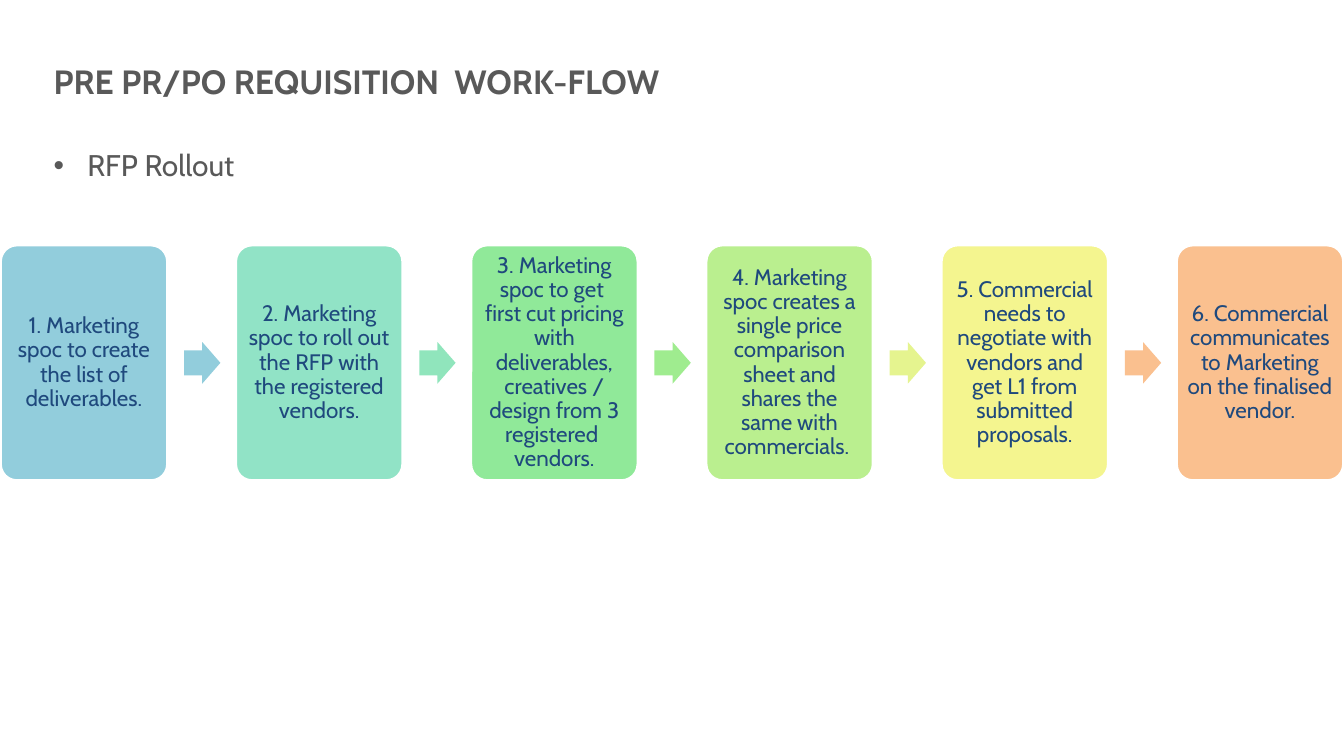
from dataclasses import dataclass

from lxml import etree
from pptx import Presentation
from pptx.dml.color import RGBColor
from pptx.enum.shapes import MSO_SHAPE
from pptx.enum.text import MSO_ANCHOR, PP_ALIGN
from pptx.oxml.ns import qn
from pptx.util import Inches, Pt

BOX = MSO_SHAPE.ROUNDED_RECTANGLE
ARROW = MSO_SHAPE.RIGHT_ARROW
MIDDLE = MSO_ANCHOR.MIDDLE
CENTER = PP_ALIGN.CENTER

FONT = "Cabin"
GREY, NAVY, WHITE = "595959", "1F497D", "FFFFFF"
TOP, WIDTH, HEIGHT, PITCH = 1.82, 1.25, 1.76, 1.75
ARROW_W, ARROW_H, ARROW_GAP = 0.27, 0.31, 0.12


@dataclass
class Step:
    text: str
    fill: str
    arrow: str = ""  # colour of the arrow to the next step


STEPS = [
    Step("1. Marketing spoc to create the list of deliverables.",
         "92CDDC", "92CDDC"),
    Step("2. Marketing spoc to roll out the RFP with the registered vendors.",
         "91E3C6", "90E5BC"),
    Step("3. Marketing spoc to get  first cut pricing with deliverables, "
         "creatives / design from 3 registered  vendors.",
         "90E999", "9FEC8F"),
    Step("4. Marketing spoc creates a single price comparison sheet and "
         "shares the same with commercials. ",
         "BAEF8F", "E5F48F"),
    Step("5. Commercial needs to negotiate with vendors and get L1 from "
         "submitted proposals.",
         "F4F58F", "FAC08F"),
    Step("6. Commercial communicates to Marketing on the finalised vendor.",
         "FAC08F"),
]


def color(code: str) -> RGBColor:
    return RGBColor.from_string(code)


def write(frame, text: str, size: float, code: str, bold: bool = False):
    """Fill a text frame with one styled paragraph and return it."""
    frame.word_wrap = True
    frame.text = text
    para = frame.paragraphs[0]
    font = para.runs[0].font
    font.name, font.size, font.bold = FONT, Pt(size), bold
    font.color.rgb = color(code)
    return para


def add_label(slide, left: float, top: float, width: float, height: float):
    """Add a text box flush with its left edge and return its frame."""
    box = slide.shapes.add_textbox(
        Inches(left), Inches(top), Inches(width), Inches(height))
    box.text_frame.margin_left = 0
    return box.text_frame


def add_form(slide, kind, left: float, top: float, width: float,
             height: float, fill: str):
    """Add a flat preset shape without an outline."""
    form = slide.shapes.add_shape(
        kind, Inches(left), Inches(top), Inches(width), Inches(height))
    form.shadow.inherit = False
    form.fill.solid()
    form.fill.fore_color.rgb = color(fill)
    form.line.fill.background()
    return form


def add_step(slide, step: Step, left: float) -> None:
    box = add_form(slide, BOX, left, TOP, WIDTH, HEIGHT, step.fill)
    box.adjustments[0] = 0.1
    box.line.color.rgb = color(WHITE)
    box.line.width = Pt(2)
    frame = box.text_frame
    frame.vertical_anchor = MIDDLE
    frame.margin_left = frame.margin_right = Inches(0.05)
    frame.margin_top = frame.margin_bottom = Inches(0.05)
    para = write(frame, step.text, 12, NAVY)
    para.alignment = CENTER
    para.line_spacing = 0.9


def add_arrow(slide, fill: str, left: float) -> None:
    top = TOP + (HEIGHT - ARROW_H) / 2
    arrow = add_form(slide, ARROW, left, top, ARROW_W, ARROW_H, fill)
    arrow.adjustments[0] = 0.6
    arrow.adjustments[1] = 0.5


def main() -> None:
    deck = Presentation()
    deck.slide_width = Inches(10)
    deck.slide_height = deck.slide_width * 9 // 16
    slide = deck.slides.add_slide(deck.slide_layouts[6])

    # Title
    frame = add_label(slide, 0.4, 0.4, 8.24, 0.4)
    frame.vertical_anchor = MIDDLE
    write(frame, "PRE PR/PO REQUISITION  WORK-FLOW", 18, GREY, True)

    # Bulleted subtitle
    frame = add_label(slide, 0.4, 1.12, 6.87, 0.42)
    frame.margin_top = 0
    para = write(frame, "RFP Rollout", 16, GREY)
    props = para._p.get_or_add_pPr()
    props.set("marL", str(Inches(0.25)))
    props.set("indent", str(Inches(-0.25)))
    etree.SubElement(props, qn("a:buFont")).set("typeface", "Arial")
    etree.SubElement(props, qn("a:buChar")).set("char", "•")
    para.line_spacing = 0.9

    # Steps and the arrows between them
    for i, step in enumerate(STEPS):
        left = i * PITCH
        add_step(slide, step, left)
        if step.arrow:
            add_arrow(slide, step.arrow, left + WIDTH + ARROW_GAP)

    deck.save("out.pptx")


if __name__ == "__main__":
    main()
